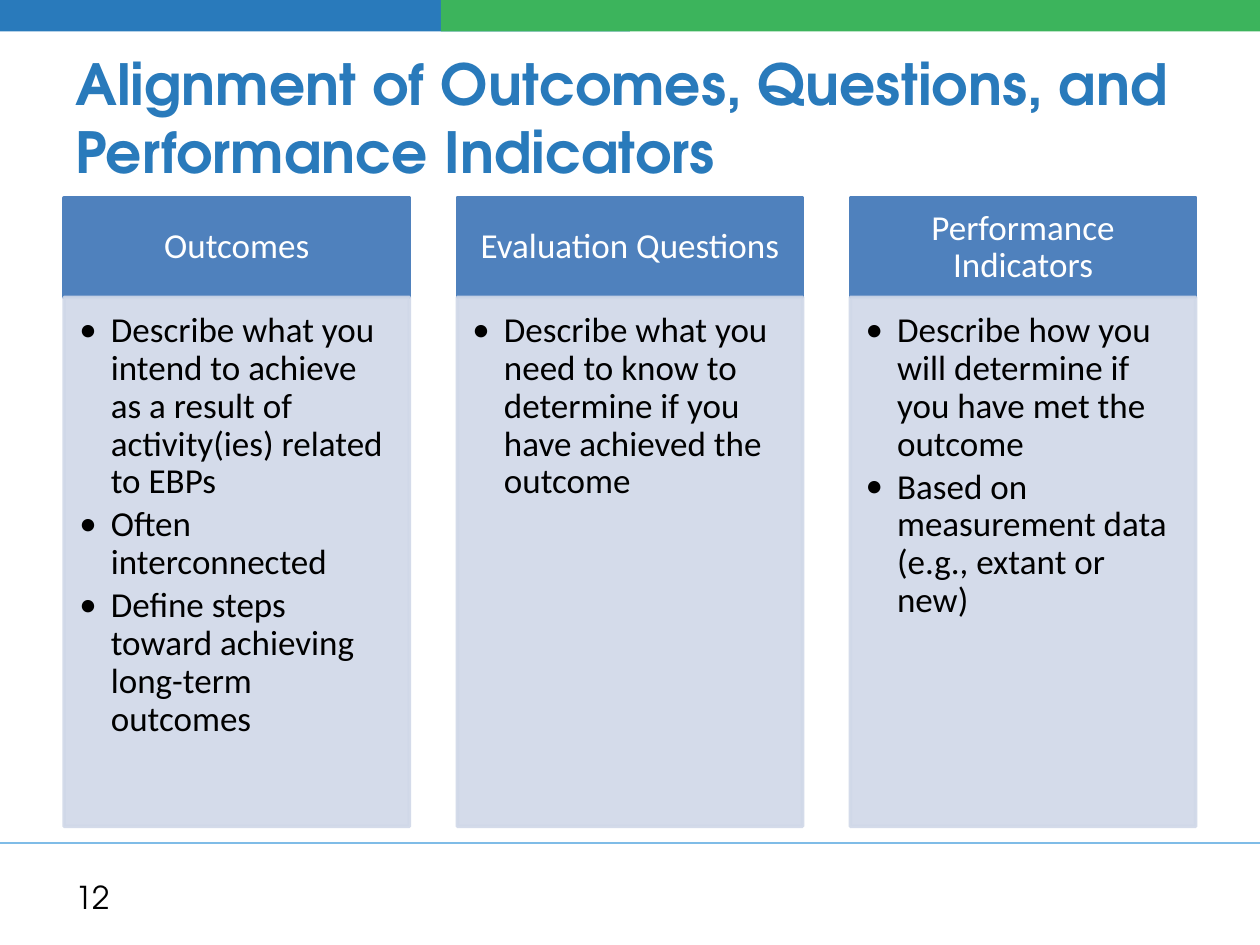
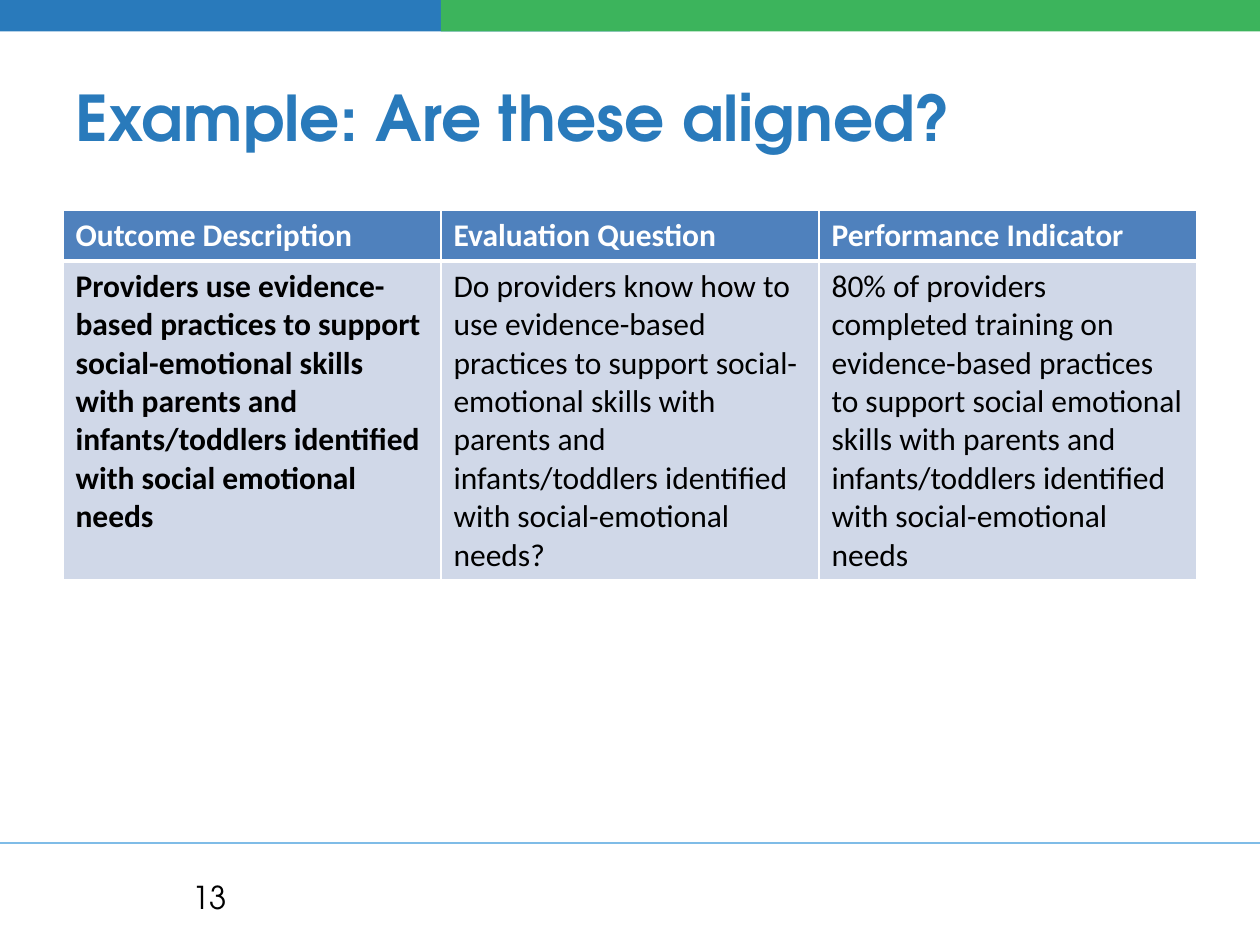
import pptx
import pptx.util
import pptx.dml.color
import pptx.enum.shapes
import pptx.enum.text
import pptx.oxml
import pptx.oxml.ns
from lxml import etree

Inches = pptx.util.Inches
Pt = pptx.util.Pt
RGBColor = pptx.dml.color.RGBColor
RECTANGLE = pptx.enum.shapes.MSO_SHAPE.RECTANGLE
ALIGN = pptx.enum.text.PP_ALIGN
ANCHOR = pptx.enum.text.MSO_ANCHOR
qn = pptx.oxml.ns.qn

BLUE = RGBColor(0x29, 0x7A, 0xBB)
GREEN = RGBColor(0x3C, 0xB4, 0x5C)
RULE = RGBColor(0x7F, 0xBC, 0xE7)
HEADER = RGBColor(0x4F, 0x81, 0xBD)
PANEL = RGBColor(0xD0, 0xD8, 0xE8)
WHITE = RGBColor(0xFF, 0xFF, 0xFF)
BLACK = RGBColor(0, 0, 0)
HEADING_FONT = "TeX Gyre Adventor"
BODY_FONT = "Calibri"


def write(frame, text, size, color, font=BODY_FONT, bold=False, align=ALIGN.LEFT):
    """Fill a text frame; each line of the text becomes a paragraph."""
    frame.text = text
    frame.word_wrap = True
    for paragraph in frame.paragraphs:
        paragraph.alignment = align
        for span in paragraph.runs:
            span.font.name = font
            span.font.size = Pt(size)
            span.font.bold = bold
            span.font.color.rgb = color


def add_rectangle(page, left, top, width, height, fill, line_width=0):
    box = page.shapes.add_shape(RECTANGLE, Inches(left), Inches(top),
                                Inches(width), Inches(height))
    box.shadow.inherit = False
    box.fill.solid()
    box.fill.fore_color.rgb = fill
    if line_width:
        box.line.color.rgb = fill
        box.line.width = Pt(line_width)
    else:
        box.line.fill.background()
    return box


deck = pptx.Presentation()
deck.slide_width = Inches(10)
deck.slide_height = Inches(7.5)

# Shared parts: footer rule, top bands, title and page number
pages = []
for title, title_size, number, number_align in [
    ("Alignment of Outcomes, Questions, and Performance Indicators", 32.4, "12", ALIGN.LEFT),
    ("Example: Are these aligned?", 36, "13", ALIGN.CENTER),
]:
    page = deck.slides.add_slide(deck.slide_layouts[6])
    pages.append(page)

    rule = page.shapes.add_connector(pptx.enum.shapes.MSO_CONNECTOR.STRAIGHT,
                                     0, Inches(6.69), Inches(10), Inches(6.69))
    rule.line.color.rgb = RULE
    rule.line.width = Pt(1.5)
    etree.SubElement(rule._element.spPr, qn("a:effectLst"))

    # The bands bleed over the top edge, green overlapping blue
    add_rectangle(page, 0, -1.25, 5, 1.5, BLUE)
    add_rectangle(page, 3.5, -1.25, 6.5, 1.5, GREEN)

    for top, width, height, text, size, color, bold, align in [
        (0.3, 9, 1.25, title, title_size, BLUE, True, ALIGN.LEFT),
        (6.92, 2.33, 0.4, number, 18, BLACK, False, number_align),
    ]:
        box = page.shapes.add_textbox(Inches(0.5), Inches(top), Inches(width), Inches(height))
        box.text_frame.vertical_anchor = ANCHOR.MIDDLE
        write(box.text_frame, text, size, color, HEADING_FONT, bold, align)

alignment_page, example_page = pages

# Slide 1: three headed columns
COLUMNS = [
    ("Outcomes", [
        "Describe what you intend to achieve as a result of activity(ies) related to EBPs",
        "Often interconnected",
        "Define steps toward achieving long-term outcomes"]),
    ("Evaluation Questions", [
        "Describe what you need to know to determine if you have achieved the outcome"]),
    ("Performance Indicators", [
        "Describe how you will determine if you have met the outcome",
        "Based on measurement data (e.g., extant or new)"]),
]
COLUMN_WIDTH = 2.74
COLUMN_STEP = 3.12

for index, (heading, points) in enumerate(COLUMNS):
    left = 0.51 + index * COLUMN_STEP
    head = add_rectangle(alignment_page, left, 1.57, COLUMN_WIDTH, 0.79, HEADER, 2)
    body = add_rectangle(alignment_page, left, 2.36, COLUMN_WIDTH, 4.2, PANEL, 2)
    for color in body._element.spPr.iter(qn("a:srgbClr")):
        etree.SubElement(color, qn("a:alpha"), val="90000")

    write(head.text_frame, heading, 20, WHITE, align=ALIGN.CENTER)
    write(body.text_frame, "\n".join(points), 20, BLACK)
    for box, anchor, insets in [
        (head, ANCHOR.MIDDLE, (0.16, 0.09, 0.16, 0.09)),
        (body, ANCHOR.TOP, (0.12, 0.12, 0.16, 0.17)),
    ]:
        frame = box.text_frame
        frame.vertical_anchor = anchor
        (frame.margin_left, frame.margin_top,
         frame.margin_right, frame.margin_bottom) = map(Inches, insets)
        for paragraph in frame.paragraphs:
            paragraph.line_spacing = 0.9

    for paragraph in body.text_frame.paragraphs:
        paragraph.space_after = Pt(3)
        properties = paragraph._p.get_or_add_pPr()
        properties.set("marL", str(Inches(0.25)))
        properties.set("indent", str(-Inches(0.25)))
        etree.SubElement(properties, qn("a:buFont"), typeface=BODY_FONT)
        etree.SubElement(properties, qn("a:buChar"), char="•")

# Slide 2: example table
ROWS = [
    ["Outcome Description", "Evaluation Question", "Performance Indicator"],
    ["Providers use evidence-based practices to support social-emotional skills with "
     "parents and infants/toddlers identified with social emotional needs",
     "Do providers know how to use evidence-based practices to support social-emotional "
     "skills with parents and infants/toddlers identified with social-emotional needs?",
     "80% of providers completed training on evidence-based practices to support social "
     "emotional skills with parents and infants/toddlers identified with "
     "social-emotional needs"],
]
table = example_page.shapes.add_table(2, 3, Inches(0.5), Inches(1.67),
                                      Inches(9), Inches(2.93)).table
table.horz_banding = False
table.first_col = True
table.rows[0].height = Inches(0.4)
table.rows[1].height = Inches(2.53)

for row, texts in enumerate(ROWS):
    for column, text in enumerate(texts):
        cell = table.cell(row, column)
        write(cell.text_frame, text, 18, BLACK if row else WHITE,
              bold=row == 0 or column == 0)
        # Borders come before the fill; the line under the header is thicker
        properties = cell._tc.get_or_add_tcPr()
        for side in ("lnL", "lnR", "lnT", "lnB"):
            under_header = side == ("lnT" if row else "lnB")
            border = etree.SubElement(properties, qn("a:" + side),
                                      w=str(Pt(3 if under_header else 1)))
            paint = etree.SubElement(border, qn("a:solidFill"))
            etree.SubElement(paint, qn("a:srgbClr"), val=str(WHITE))
        cell.fill.solid()
        cell.fill.fore_color.rgb = PANEL if row else HEADER

deck.save("out.pptx")
